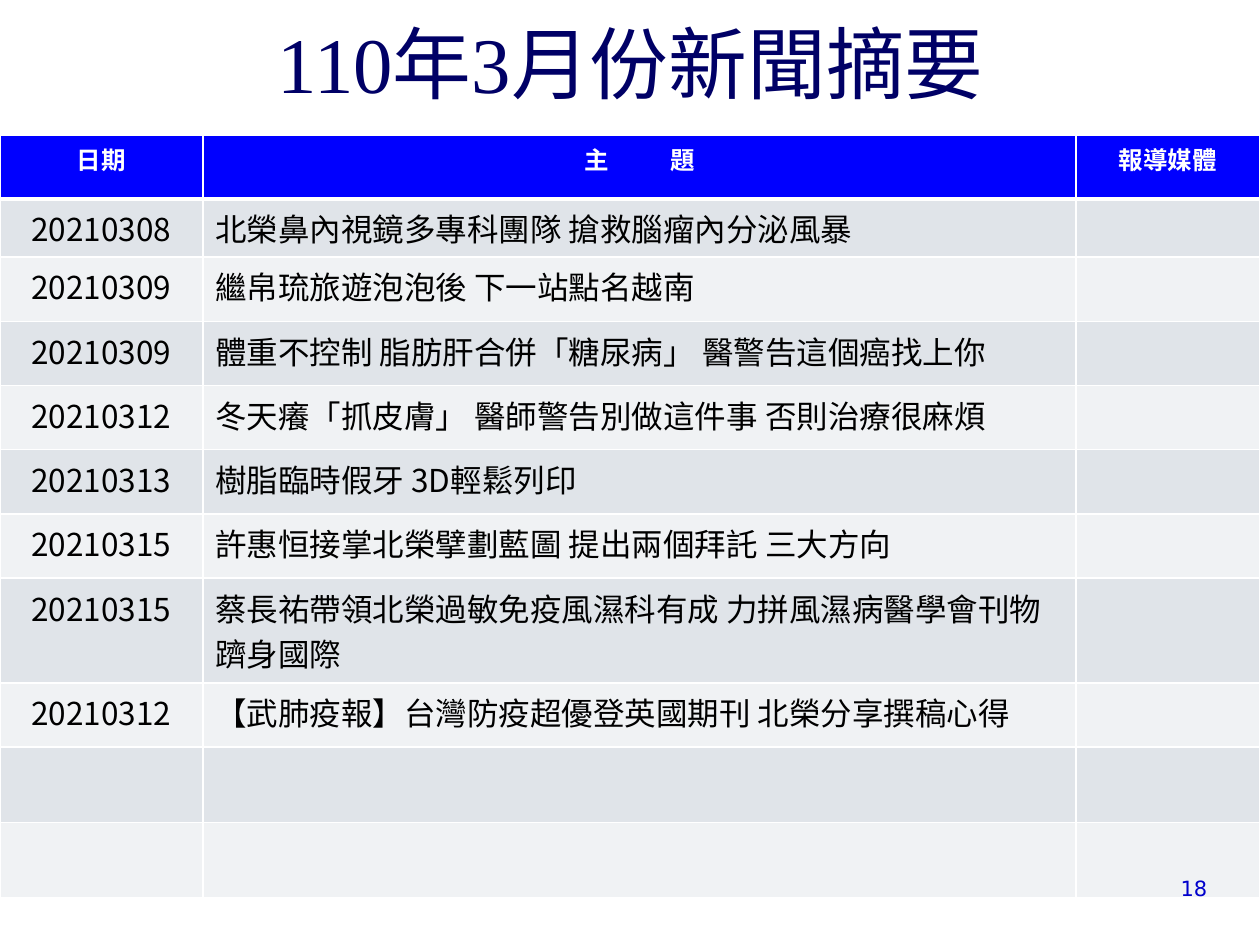
"""Build the monthly news summary slide with its table of dates and topics."""
import pptx
import pptx.util
import pptx.dml.color
import pptx.enum.text
import pptx.oxml
import pptx.oxml.ns
from lxml import etree

In, Pt = pptx.util.Inches, pptx.util.Pt
AL = pptx.enum.text.PP_ALIGN
CJK = "Noto Sans CJK SC"
NS = pptx.oxml.ns.nsdecls("a")


def color(h):
    return pptx.dml.color.RGBColor.from_string(h)


def style(p, size, name, h, align, bold=False):
    p.alignment = align
    for r in p.runs:
        f = r.font
        f.size, f.name, f.bold = Pt(size), name, bold
        f.color.rgb = color(h)
        ea = etree.SubElement(r._r.get_or_add_rPr(), pptx.oxml.ns.qn("a:ea"))
        ea.set("typeface", CJK)


rows = [
    ("日期", "主 ", "報導媒體"),
    ("20210308", "北榮鼻內視鏡多專科團隊 搶救腦瘤內分泌風暴", ""),
    ("20210309", "繼帛琉旅遊泡泡後 下一站點名越南", ""),
    ("20210309", "體重不控制 脂肪肝合併「糖尿病」 醫警告這個癌找上你", ""),
    ("20210312", "冬天癢「抓皮膚」 醫師警告別做這件事 否則治療很麻煩", ""),
    ("20210313", "樹脂臨時假牙 3D輕鬆列印", ""),
    ("20210315", "許惠恒接掌北榮擘劃藍圖 提出兩個拜託 三大方向", ""),
    ("20210315", "蔡長祐帶領北榮過敏免疫風濕科有成 力拼風濕病醫學會刊物 躋身國際", ""),
    ("20210312", "【武肺疫報】台灣防疫超優登英國期刊 北榮分享撰稿心得", ""),
    ("", "", ""),
    ("", "", ""),
]
widths = [1.61, 6.93, 1.46]
heights = [0.51, 0.46] + [0.51] * 5 + [0.83, 0.51] + [0.6] * 2

prs = pptx.Presentation()
prs.slide_width, prs.slide_height = In(10), In(7.5)
s = prs.slides.add_slide(prs.slide_layouts[6])

sp = s.shapes.add_textbox(In(0.63), In(0.34), In(8.75), In(0.58))
tf = sp.text_frame
tf.word_wrap = True
tf.vertical_anchor = pptx.enum.text.MSO_ANCHOR.BOTTOM
tf.text = "110年3月份新聞摘要"
style(tf.paragraphs[0], 45, "Times New Roman", "000066", AL.CENTER)

gf = s.shapes.add_table(len(rows), len(widths), 0, In(1.07), prs.slide_width, In(sum(heights)))
tbl = gf.table
for col, w in zip(tbl.columns, widths):
    col.width = In(w)
for i, (row, h) in enumerate(zip(rows, heights)):
    tbl.rows[i].height = In(h)
    fill = "0000FF" if i == 0 else ("F0F2F4", "E0E4E9")[i % 2]
    for j, text in enumerate(row):
        cell = tbl.cell(i, j)
        cell.fill.solid()
        cell.fill.fore_color.rgb = color(fill)
        thick = {"lnB": 0, "lnT": 1}
        for k, side in enumerate(("lnL", "lnR", "lnT", "lnB")):
            w = Pt(3 if thick.get(side) == i else 1)
            cell._tc.get_or_add_tcPr().insert(k, pptx.oxml.parse_xml(
                f'<a:{side} {NS} w="{w}"><a:solidFill><a:srgbClr val="FFFFFF"/></a:solidFill></a:{side}>'))
        p = cell.text_frame.paragraphs[0]
        if text:
            p.text = text
        if i == 0 and j == 1:
            p.add_run().text = "題"
            p.runs[0]._r.get_or_add_rPr().set("spc", "1600")
        if i == 0:
            style(p, 14, CJK, "FFFFFF", AL.CENTER, True)
        else:
            style(p, 18, CJK, "000000", AL.LEFT if j == 1 else AL.CENTER)

sp = s.shapes.add_textbox(In(8.94), In(6.9), In(0.74), In(0.3))
tf = sp.text_frame
tf.word_wrap = True
tf.text = "18"
style(tf.paragraphs[0], 12, "DejaVu Sans", "0000CC", AL.RIGHT)

prs.save("out.pptx")
